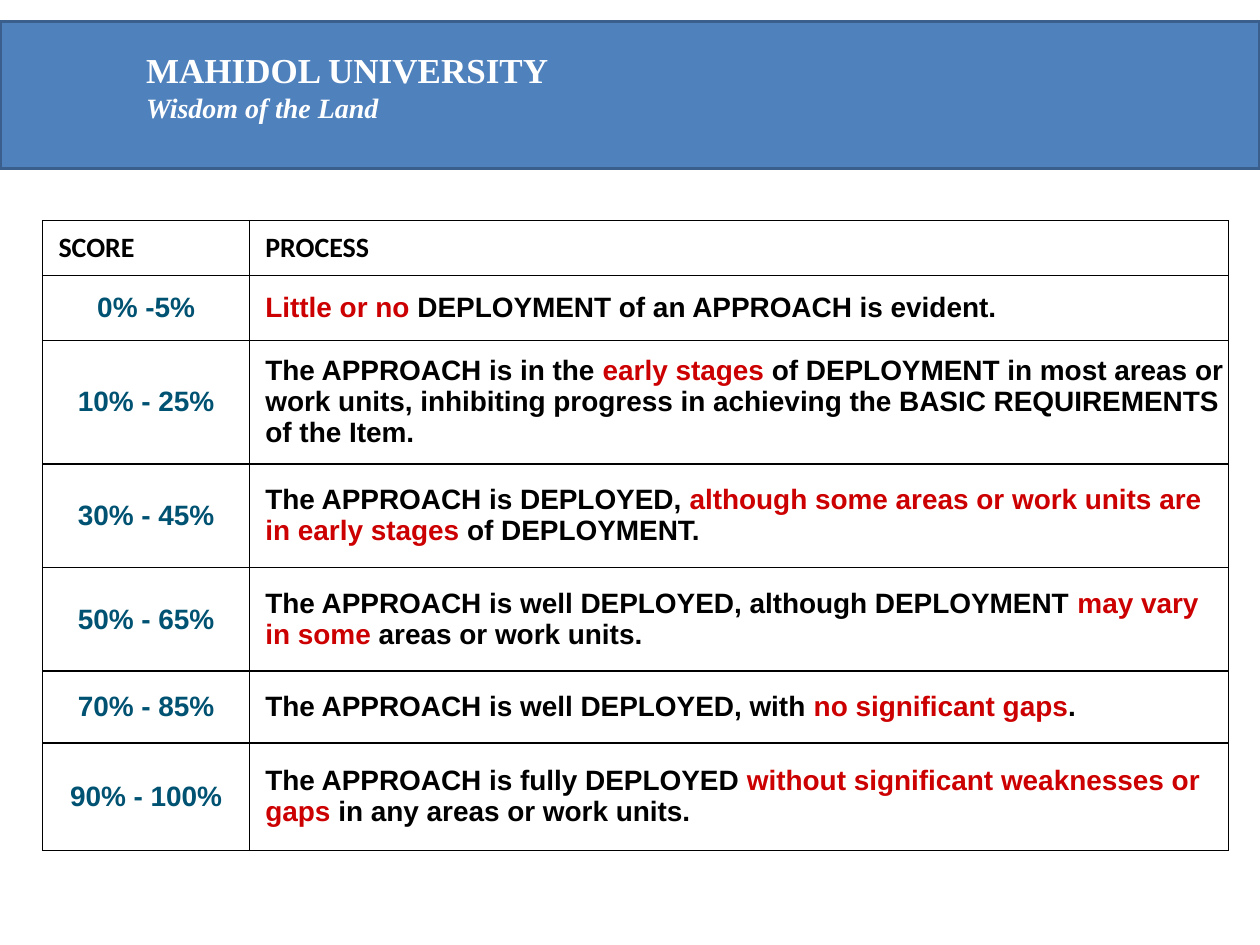
from dataclasses import dataclass
from lxml.etree import SubElement
from pptx import Presentation
from pptx.dml.color import RGBColor
from pptx.enum.shapes import MSO_SHAPE
from pptx.enum.text import MSO_ANCHOR, MSO_AUTO_SIZE, PP_ALIGN
from pptx.oxml.ns import qn
from pptx.util import Cm, Pt


@dataclass(frozen=True)
class Theme:
    band: str = "4F81BD"
    edge: str = "3A5F8C"
    light: str = "FFFFFF"
    ink: str = "000000"
    score: str = "005272"
    mark: str = "CC0000"
    large: int = 20
    text: int = 16
    serif: str = "Times New Roman"
    sans: str = "Arial"
    head: str = "Calibri"


def apply(item, form):
    for name, value in form.items():
        setattr(item, name, value)


class Deck:
    def __init__(self, theme):
        self.theme = theme
        self.deck = Presentation()
        apply(self.deck, {"slide_width": Cm(25.4), "slide_height": Cm(19.05)})
        self.slide = self.deck.slides.add_slide(self.deck.slide_layouts[5])

    def label(self, para, text, color, form):
        run = para.add_run()
        run.text = text
        apply(run.font, {"size": Pt(self.theme.text), "bold": True, **form})
        run.font.color.rgb = RGBColor.from_string(color)

    def band(self, *box):
        shape = self.slide.shapes.add_shape(MSO_SHAPE.RECTANGLE, *map(Cm, box))
        shape.shadow.inherit = False
        shape.fill.solid()
        shape.fill.fore_color.rgb = RGBColor.from_string(self.theme.band)
        shape.line.color.rgb = RGBColor.from_string(self.theme.edge)
        shape.line.width = Pt(2)
        self.slide.shapes.title.element.addprevious(shape.element)

    def title(self, lines, *box):
        shape = self.slide.shapes.title
        apply(shape, dict(zip(("left", "top", "width", "height"), map(Cm, box))))
        frame = shape.text_frame
        apply(frame, {"word_wrap": False, "vertical_anchor": MSO_ANCHOR.TOP,
                      "auto_size": MSO_AUTO_SIZE.SHAPE_TO_FIT_TEXT})
        for spot, (text, form) in enumerate(lines):
            para = frame.add_paragraph() if spot else frame.paragraphs[0]
            para.alignment = PP_ALIGN.LEFT
            self.label(para, text, self.theme.light, {"name": self.theme.serif, **form})

    def border(self, cell):
        props = cell._tc.get_or_add_tcPr()
        for side in ("lnL", "lnR", "lnT", "lnB"):
            line = SubElement(props, qn(f"a:{side}"), w=str(Pt(1)))
            fill = SubElement(line, qn("a:solidFill"))
            SubElement(fill, qn("a:srgbClr"), val=self.theme.ink)

    def cell(self, cell, text, font, color, center):
        apply(cell, {"margin_left": 0, "margin_right": 0, "margin_top": 0,
                     "margin_bottom": 0, "vertical_anchor": MSO_ANCHOR.MIDDLE})
        self.border(cell)
        cell.fill.background()
        para = cell.text_frame.paragraphs[0]
        if center:
            para.alignment = PP_ALIGN.CENTER
        else:
            para._p.get_or_add_pPr().set("marL", str(Cm(0.32)))
        for spot, part in enumerate(text.split("*")):
            if part:
                tint = self.theme.mark if spot % 2 else color
                self.label(para, part, tint, {"name": font})

    def table(self, rows, left, top, widths, heights):
        size = Cm(sum(widths)), Cm(sum(heights))
        frame = self.slide.shapes.add_table(len(rows), len(widths), Cm(left), Cm(top), *size)
        grid = frame.table
        apply(grid, {"first_row": False, "horz_banding": False})
        for col, width in zip(grid.columns, widths):
            col.width = Cm(width)
        for row, height in zip(grid.rows, heights):
            row.height = Cm(height)
        for down, row in enumerate(rows):
            for across, text in enumerate(row):
                score = down > 0 and across == 0
                font = self.theme.sans if down else self.theme.head
                color = self.theme.score if score else self.theme.ink
                self.cell(grid.cell(down, across), text, font, color, score)


ROWS = [
    ("SCORE", "PROCESS"),
    ("0% -5%", "*Little or no *DEPLOYMENT of an APPROACH is evident."),
    ("10% - 25%", "The APPROACH is in the *early stages* of DEPLOYMENT in most areas or "
     "work units, inhibiting progress in achieving the BASIC REQUIREMENTS of the Item."),
    ("30% - 45%", "The APPROACH is DEPLOYED,* although some areas or work units are "
     "in early stages* of DEPLOYMENT."),
    ("50% - 65%", "The APPROACH is well DEPLOYED, although DEPLOYMENT *may vary "
     "in some* areas or work units."),
    ("70% - 85%", "The APPROACH is well DEPLOYED, with *no significant gaps*."),
    ("90% - 100%", "The APPROACH is fully DEPLOYED *without significant weaknesses or "
     "gaps* in any areas or work units."),
]


def main():
    theme = Theme()
    deck = Deck(theme)
    deck.band(0, 0.43, 25.4, 2.97)
    deck.title([("MAHIDOL UNIVERSITY", {"size": Pt(theme.large)}),
                ("Wisdom of the Land", {"italic": True})], 2.69, 0.86, 8.66, 1.78)
    deck.table(ROWS, 0.86, 4.45, (4.17, 19.74), (1.1, 1.31, 2.49, 2.09, 2.09, 1.45, 2.16))
    deck.deck.save("out.pptx")


if __name__ == "__main__":
    main()
